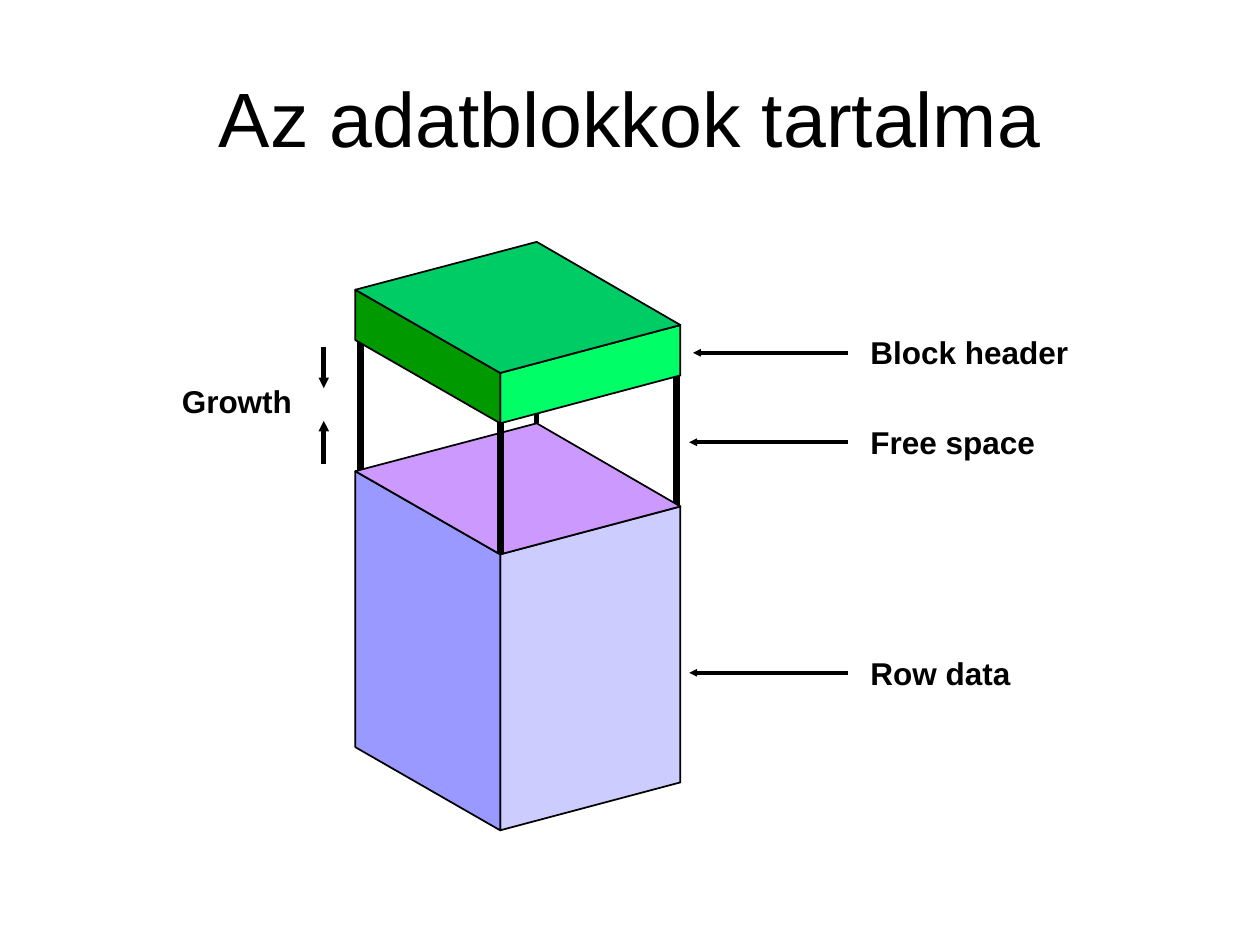
from dataclasses import dataclass

from lxml.etree import SubElement
from pptx import Presentation
from pptx.dml.color import RGBColor
from pptx.enum.shapes import MSO_CONNECTOR
from pptx.enum.text import MSO_ANCHOR, MSO_AUTO_SIZE, PP_ALIGN
from pptx.oxml.ns import qn
from pptx.util import Inches, Pt


@dataclass(frozen=True)
class Theme:
    """Colours, type sizes and line widths of the slide."""

    font: str = "Arial"
    ink: str = "000000"
    title_size: float = 44
    label_size: float = 18
    outline: float = 1
    pointer: float = 2.25
    growth: float = 3
    post: float = 4
    header_top: str = "00CC66"
    header_left: str = "009900"
    header_right: str = "00FF66"
    data_top: str = "CC99FF"
    data_left: str = "9999FF"
    data_right: str = "CCCCFF"


THEME = Theme()
COLUMNS, ROWS = 100, 75
LEFT, BACK, RIGHT, FRONT = (28.2, 23), (42.6, 19.2), (54, 25.8), (39.7, 29.6)
HEADER_TOP, HEADER_BOTTOM, DATA_TOP, DATA_BOTTOM = 0, 4, 14.4, 36.3


def grid(cells):
    """Turn a number of grid cells into a length."""
    return Inches(cells / 10)


def colour(value):
    """Turn a hex string into a colour."""
    return RGBColor.from_string(value)


def lowered(corner, depth):
    """Move a corner of the block straight down."""
    return corner[0], corner[1] + depth


def format_paragraph(paragraph, size, bold, alignment):
    """Set the type of a paragraph."""
    paragraph.alignment = alignment
    paragraph.font.name = THEME.font
    paragraph.font.size = Pt(size)
    paragraph.font.bold = bold
    paragraph.font.color.rgb = colour(THEME.ink)


def set_title(slide, text):
    """Place and format the title placeholder."""
    title = slide.shapes.title
    title.left, title.top, title.width, title.height = map(grid, (5, 3, 90, 12.5))
    title.text_frame.text = text
    title.text_frame.vertical_anchor = MSO_ANCHOR.MIDDLE
    format_paragraph(title.text_frame.paragraphs[0], THEME.title_size, False, PP_ALIGN.CENTER)


def add_label(slide, text, left, top, width, alignment=PP_ALIGN.LEFT, wrap=True):
    """Add a bold label one line high."""
    box = slide.shapes.add_textbox(*map(grid, (left, top, width, 3.9)))
    frame = box.text_frame
    frame.text = text
    frame.word_wrap = wrap
    frame.auto_size = MSO_AUTO_SIZE.SHAPE_TO_FIT_TEXT
    format_paragraph(frame.paragraphs[0], THEME.label_size, True, alignment)


def add_line(slide, start, end, width, arrow_end=None):
    """Add a straight line, with an arrowhead at the named end."""
    line = slide.shapes.add_connector(MSO_CONNECTOR.STRAIGHT, *map(grid, (*start, *end)))
    line.line.color.rgb = colour(THEME.ink)
    line.line.width = Pt(width)
    if arrow_end:
        outline = line.line._get_or_add_ln()
        SubElement(outline, qn(f"a:{arrow_end}"), type="triangle", w="sm", len="sm")
    SubElement(line._element.spPr, qn("a:effectLst"))


def add_face(slide, corners, fill):
    """Add one outlined face of a block."""
    points = [tuple(map(grid, corner)) for corner in corners]
    builder = slide.shapes.build_freeform(*points[0])
    builder.add_line_segments(points[1:], close=True)
    face = builder.convert_to_shape()
    face.shadow.inherit = False
    face.fill.solid()
    face.fill.fore_color.rgb = colour(fill)
    face.line.color.rgb = colour(THEME.ink)
    face.line.width = Pt(THEME.outline)


def add_block(slide, top, bottom, right_fill, left_fill, top_fill):
    """Add the three visible faces of a block between two depths."""
    for side, fill in ((RIGHT, right_fill), (LEFT, left_fill)):
        edges = ((side, top), (side, bottom), (FRONT, bottom), (FRONT, top))
        add_face(slide, [lowered(*edge) for edge in edges], fill)
    lid = [lowered(corner, top) for corner in (LEFT, BACK, RIGHT, FRONT)]
    add_face(slide, lid, top_fill)


def add_post(slide, corner, width, inset=0):
    """Add a post that joins the header to the row data."""
    column, row = corner
    start = column + inset, row + HEADER_BOTTOM - 0.2
    end = column + inset, row + DATA_TOP
    add_line(slide, start, end, width)


def main():
    """Build the slide and save it."""
    presentation = Presentation()
    presentation.slide_width, presentation.slide_height = grid(COLUMNS), grid(ROWS)
    slide = presentation.slides.add_slide(presentation.slide_layouts[5])
    set_title(slide, "Az adatblokkok tartalma")

    add_post(slide, LEFT, THEME.post, 0.4)
    add_post(slide, RIGHT, THEME.post, -0.3)
    add_block(slide, DATA_TOP, DATA_BOTTOM, THEME.data_right, THEME.data_left, THEME.data_top)
    add_post(slide, FRONT, THEME.post)
    add_post(slide, BACK, THEME.growth)
    add_block(slide, HEADER_TOP, HEADER_BOTTOM,
              THEME.header_right, THEME.header_left, THEME.header_top)

    pointers = (
        ("Block header", 25.9, 18.3, 28, 55),
        ("Free space", 33.1, 16.8, 35.1, 54.7),
        ("Row data", 51.4, 13.9, 53.4, 54.7),
    )
    for text, top, width, row, tip in pointers:
        add_label(slide, text, 68.1, top, width)
        add_line(slide, (tip, row), (67.3, row), THEME.pointer, "headEnd")

    add_label(slide, "Growth", 13.4, 29.8, 10.8, PP_ALIGN.CENTER, wrap=False)
    for start, end in ((27.5, 30.8), (36.8, 33.4)):
        add_line(slide, (25.7, start), (25.7, end), THEME.growth, "tailEnd")

    presentation.save("out.pptx")


if __name__ == "__main__":
    main()
